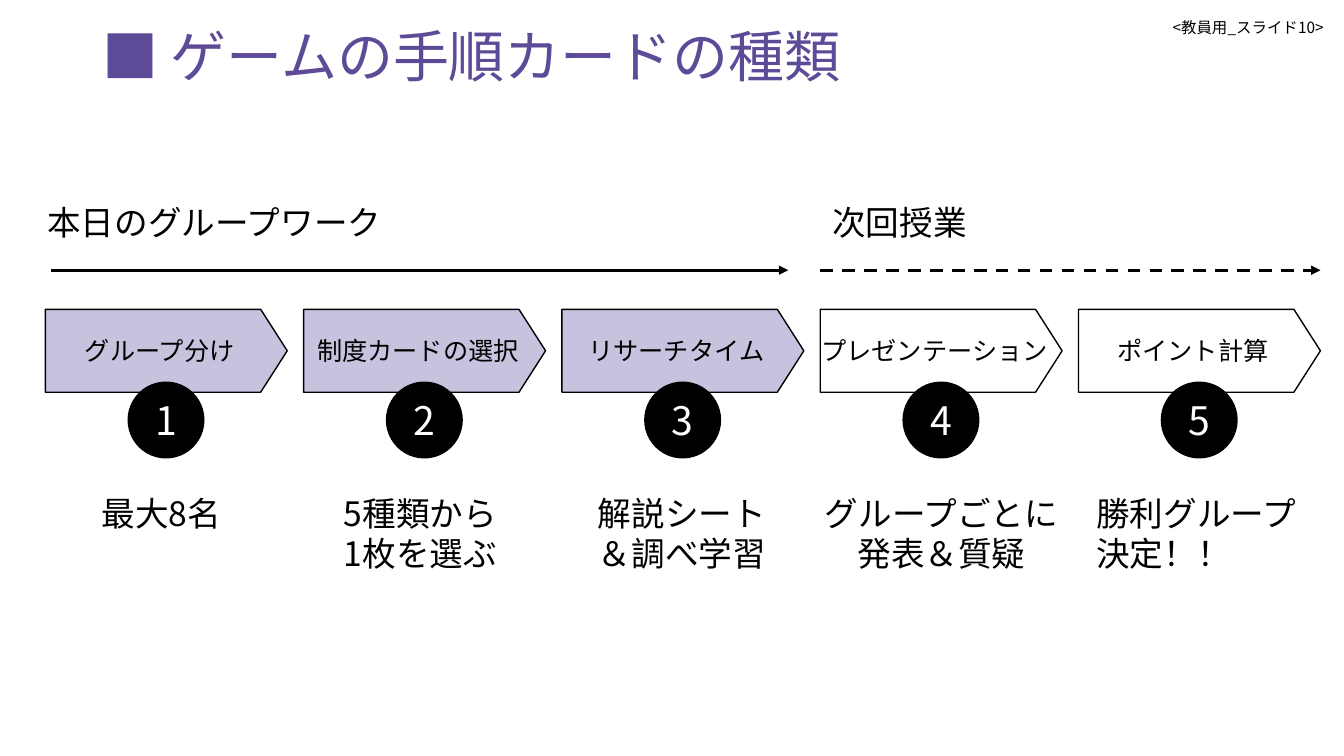
from lxml.etree import SubElement
from pptx import Presentation
from pptx.dml.color import RGBColor
from pptx.enum.dml import MSO_LINE
from pptx.enum.shapes import MSO_CONNECTOR, MSO_SHAPE
from pptx.enum.text import MSO_ANCHOR, PP_ALIGN
from pptx.oxml.ns import qn
from pptx.util import Pt

FONT = "Noto Sans CJK JP"
BLACK, WHITE, PURPLE, LILAC = "000000", "FFFFFF", "5E4B97", "C9C2DE"


def write(shape, text, size, color=BLACK, align=PP_ALIGN.LEFT, spacing=1.0):
    """Fill the shape with one paragraph per line, in Latin and East Asian type."""
    frame = shape.text_frame
    frame.text = text
    frame.word_wrap = True
    for paragraph in frame.paragraphs:
        paragraph.alignment = align
        paragraph.line_spacing = spacing
        paragraph.font.name = FONT
        paragraph.font.size = Pt(size)
        paragraph.font.color.rgb = RGBColor.from_string(color)
        defaults = paragraph._p.pPr.find(qn("a:defRPr"))
        SubElement(defaults, qn("a:ea"), typeface=FONT)


def add_solid(kind, left, top, width, height, fill):
    shape = slide.shapes.add_shape(kind, Pt(left), Pt(top), Pt(width), Pt(height))
    shape.shadow.inherit = False
    shape.fill.solid()
    shape.fill.fore_color.rgb = RGBColor.from_string(fill)
    shape.line.color.rgb = RGBColor.from_string(BLACK)
    shape.line.width = Pt(1)
    frame = shape.text_frame
    frame.vertical_anchor = MSO_ANCHOR.MIDDLE
    frame.margin_left = frame.margin_right = 0
    return shape


prs = Presentation()
prs.slide_width, prs.slide_height = Pt(960), Pt(540)
slide = prs.slides.add_slide(prs.slide_layouts[5])

title = slide.shapes.title
title.left, title.top, title.width, title.height = Pt(66), Pt(0), Pt(828), Pt(85)
title.text_frame.vertical_anchor = MSO_ANCHOR.MIDDLE
write(title, "■ ゲームの手順カードの種類", 40, PURPLE, spacing=0.9)

page_label = slide.shapes.add_textbox(Pt(720), Pt(10.8), Pt(232.6), Pt(18.7))
write(page_label, "<教員用_スライド10>", 11, align=PP_ALIGN.RIGHT, spacing=0.9)

# Sessions: name, name left, name width, arrow start, arrow end, dash
sessions = [
    ("本日のグループワーク", 26.8, 258, 36.7, 563, MSO_LINE.SOLID),
    ("次回授業", 587.5, 113, 586, 943.2, MSO_LINE.DASH),
]
for name, left, width, start, end, dash in sessions:
    session_name = slide.shapes.add_textbox(Pt(left), Pt(141), Pt(width), Pt(36))
    write(session_name, name, 24)

    arrow = slide.shapes.add_connector(
        MSO_CONNECTOR.STRAIGHT, Pt(start), Pt(193), Pt(end), Pt(193))
    arrow.line.color.rgb = RGBColor.from_string(BLACK)
    arrow.line.width = Pt(2.25)
    arrow.line.dash_style = dash
    SubElement(arrow.line._get_or_add_ln(), qn("a:tailEnd"), type="triangle")
    SubElement(arrow._element.spPr, qn("a:effectLst"))

# Steps: name, fill, caption, caption left, caption width, caption alignment
steps = [
    ("グループ分け", LILAC, "最大8名", 65.5, 106, PP_ALIGN.LEFT),
    ("制度カードの選択", LILAC, "5種類から\n1枚を選ぶ", 238.5, 134, PP_ALIGN.LEFT),
    ("リサーチタイム", LILAC, "解説シート\n＆調べ学習", 420, 138, PP_ALIGN.LEFT),
    ("プレゼンテーション", WHITE, "グループごとに\n発表＆質疑", 580, 185, PP_ALIGN.CENTER),
    ("ポイント計算", WHITE, "勝利グループ\n決定！！", 776, 162, PP_ALIGN.LEFT),
]
for number, (name, fill, text, left, width, align) in enumerate(steps, 1):
    step_left = 32.4 + (number - 1) * 184.5
    step = add_solid(MSO_SHAPE.PENTAGON, step_left, 221, 172.8, 59.2, fill)
    step.adjustments[0] = 0.32
    write(step, name, 18, align=PP_ALIGN.CENTER)

    badge = add_solid(MSO_SHAPE.OVAL, step_left + 59.2, 273, 54, 54, BLACK)
    write(badge, str(number), 28, WHITE, PP_ALIGN.CENTER)

    caption = slide.shapes.add_textbox(Pt(left), Pt(348.5), Pt(width), Pt(65.5))
    write(caption, text, 24, align=align)

prs.save("out.pptx")
